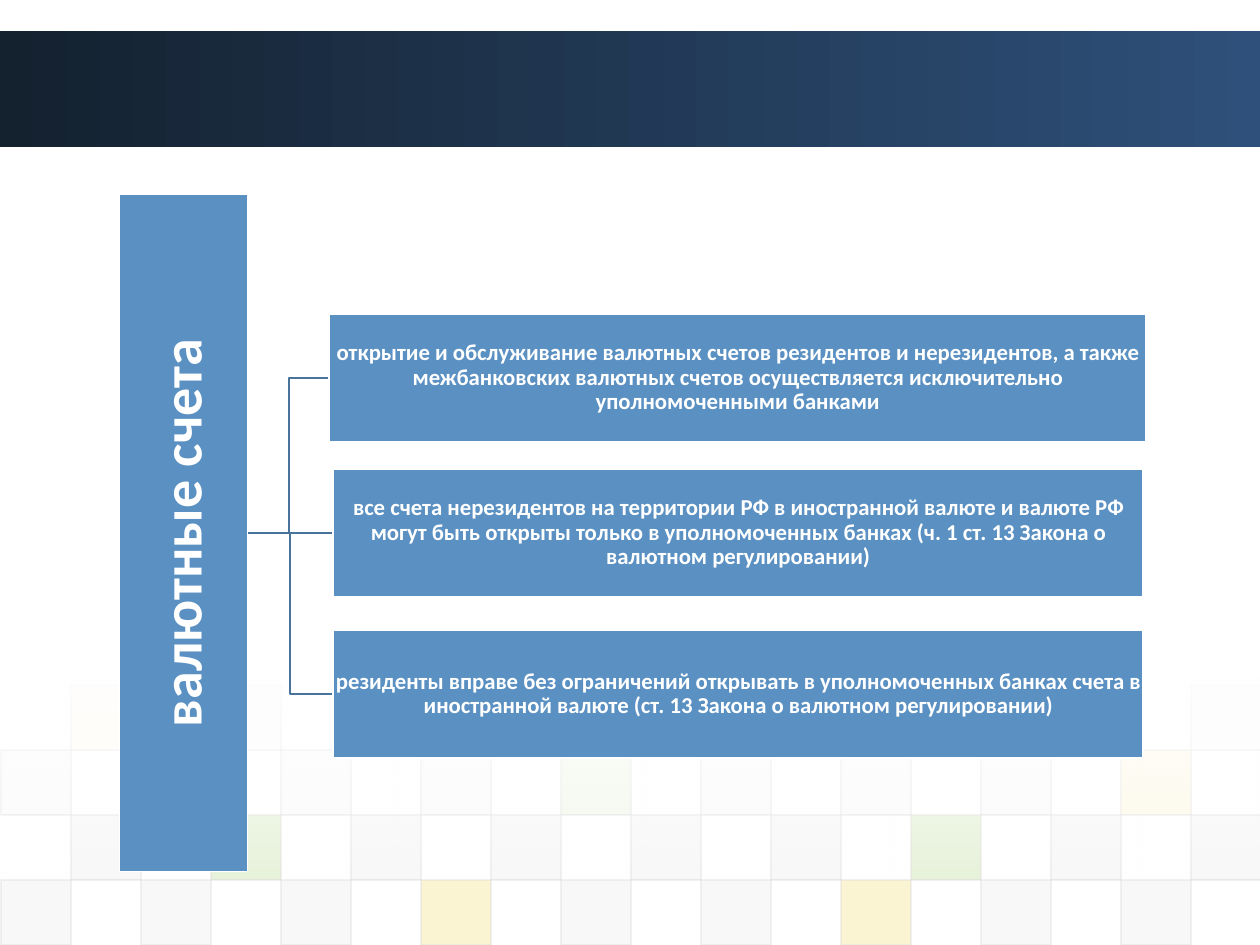
from lxml.etree import SubElement
from pptx import Presentation
from pptx.dml.color import RGBColor
from pptx.enum.shapes import MSO_SHAPE as Shape
from pptx.enum.text import MSO_ANCHOR as Anchor, PP_ALIGN as Align
from pptx.oxml.ns import qn
from pptx.util import Emu, Pt

PX = 914400 / 126  # EMU in one px
color = RGBColor.from_string
BLUE, LINE_BLUE, WHITE = "5A90C2", "48739B", "FFFFFF"
GRAY, PALE, GREEN, YELLOW = "DDDDDD", "EAEAEA", "8AC246", "EFC821"


def add_rectangle(left, top, width, height, fill=None, line=None, weight=1):
    box = [Emu(round(value * PX)) for value in (left, top, width, height)]
    shape = slide.shapes.add_shape(Shape.RECTANGLE, *box)
    shape.shadow.inherit = False
    if fill:
        shape.fill.solid()
        shape.fill.fore_color.rgb = color(fill)
    if line:
        shape.line.color.rgb = color(line)
        shape.line.width = Pt(weight)
    else:
        shape.line.fill.background()
    return shape


def set_opacity(shape, *percents):
    for element, percent in zip(shape.element.spPr.iter(qn("a:srgbClr")), percents):
        SubElement(element, qn("a:alpha")).set("val", str(percent * 1000))


presentation = Presentation()
presentation.slide_width = Emu(round(1260 * PX))
presentation.slide_height = Emu(round(945 * PX))
slide = presentation.slides.add_slide(presentation.slide_layouts[6])

# Mosaic of tiles: top, opacity, common colour, columns, accent columns
tile_rows = [
    (685, 5, PALE, (1, 3, 17), {1: YELLOW}),
    (750, 10, GRAY, (0, *range(4, 17, 2)), {8: GREEN, 16: YELLOW}),
    (815, 20, GRAY, range(1, 18, 2), {3: GREEN, 13: GREEN}),
    (880, 20, GRAY, range(0, 17, 2), {6: YELLOW, 12: YELLOW}),
]
for top, opacity, common, columns, accents in tile_rows:
    for column in columns:
        tile = add_rectangle(1 + 70 * column, top, 70, 65,
                             accents.get(column, common), GRAY, 0.75)
        set_opacity(tile, opacity, 60)

# Header band and the white fade over the tiles
band = add_rectangle(0, 31, 1260, 116)
fade = add_rectangle(0, 677, 1260, 204)
for shape, angle, colors in [(band, 0, ("14212F", "2E507A")),
                             (fade, 270, (WHITE, WHITE))]:
    shape.fill.gradient()
    shape.fill.gradient_angle = angle
    for stop, stop_color in zip(shape.fill.gradient_stops, colors):
        stop.color.rgb = color(stop_color)
set_opacity(fade, 90, 0)

# Branches from the heading to the three statements
branches = [
    [(290, 533), (290, 694), (333, 694)],
    [(333, 533)],
    [(289, 533), (289, 378), (329, 378)],
]
for points in branches:
    builder = slide.shapes.build_freeform(248, 533, scale=PX)
    builder.add_line_segments(points, close=False)
    branch = builder.convert_to_shape()
    branch.shadow.inherit = False
    branch.fill.background()
    branch.line.color.rgb = color(LINE_BLUE)
    branch.line.width = Pt(1)

# Heading and statements: box, rotation, margin, size, text
boxes = [
    ((-155, 469, 677, 128), 270, 3, 32, "валютные счета"),
    ((329, 314, 817, 128), 0, 1, 13,
     "открытие и обслуживание валютных счетов резидентов и нерезидентов, а также "
     "межбанковских валютных счетов осуществляется исключительно "
     "уполномоченными банками"),
    ((333, 469, 810, 128), 0, 1, 13,
     "все счета нерезидентов на территории РФ в иностранной валюте и валюте РФ "
     "могут быть открыты только в уполномоченных банках (ч. 1 ст. 13 Закона о "
     "валютном регулировании)"),
    ((333, 630, 810, 128), 0, 1, 13,
     "резиденты вправе без ограничений открывать в уполномоченных банках счета в "
     "иностранной валюте (ст. 13 Закона о валютном регулировании)"),
]
for box, rotation, margin, size, text in boxes:
    shape = add_rectangle(*box, BLUE, WHITE)
    shape.rotation = rotation
    frame = shape.text_frame
    frame.word_wrap = True
    frame.vertical_anchor = Anchor.MIDDLE
    frame.margin_left = frame.margin_right = Emu(round(margin * PX))
    frame.margin_top = frame.margin_bottom = Emu(round(margin * PX))
    paragraph = frame.paragraphs[0]
    paragraph.alignment = Align.CENTER
    paragraph.line_spacing = 0.9
    run = paragraph.add_run()
    run.text = text
    run.font.name = "Calibri"
    run.font.size = Pt(size)
    run.font.bold = True
    run.font.color.rgb = color(WHITE)

presentation.save("out.pptx")
